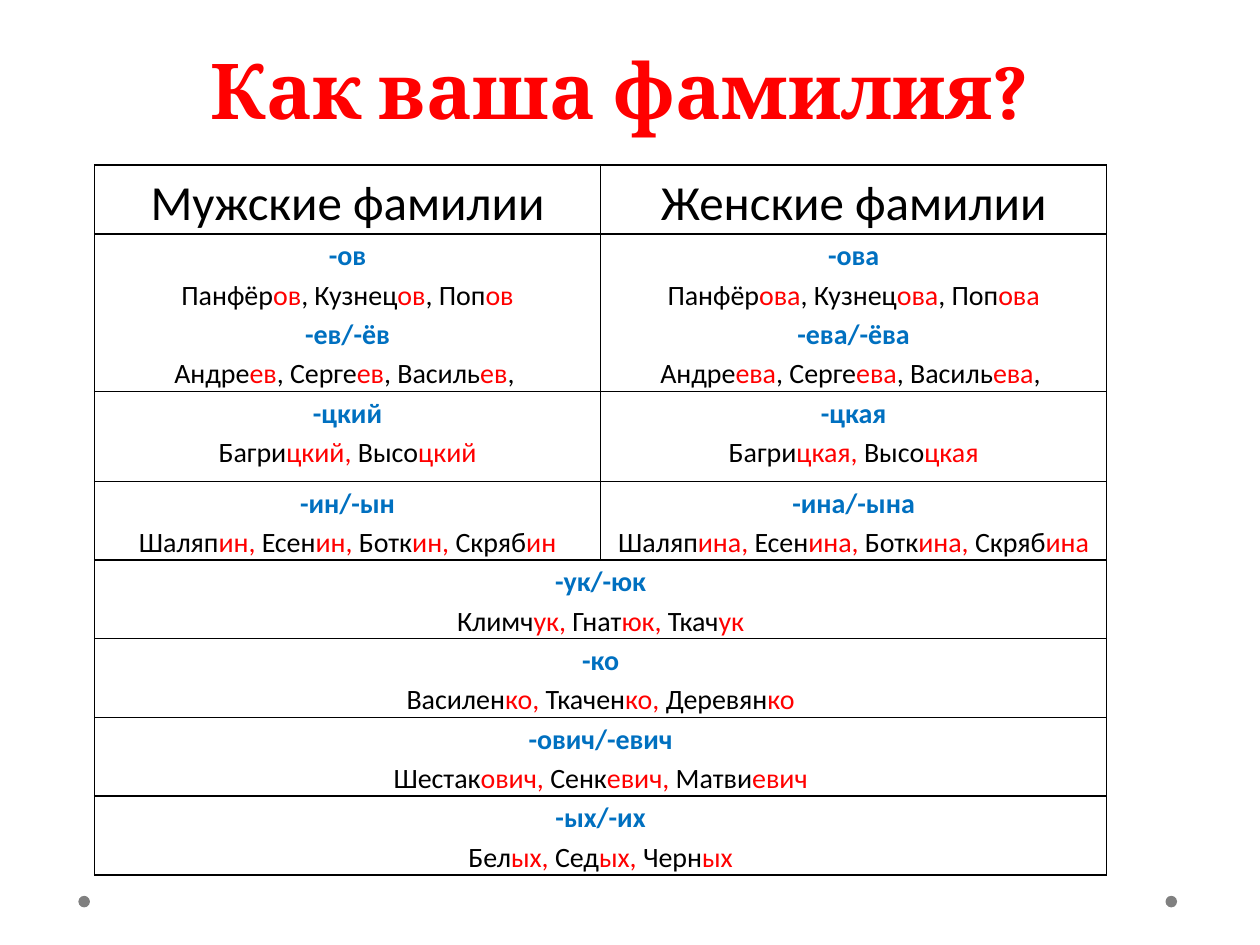
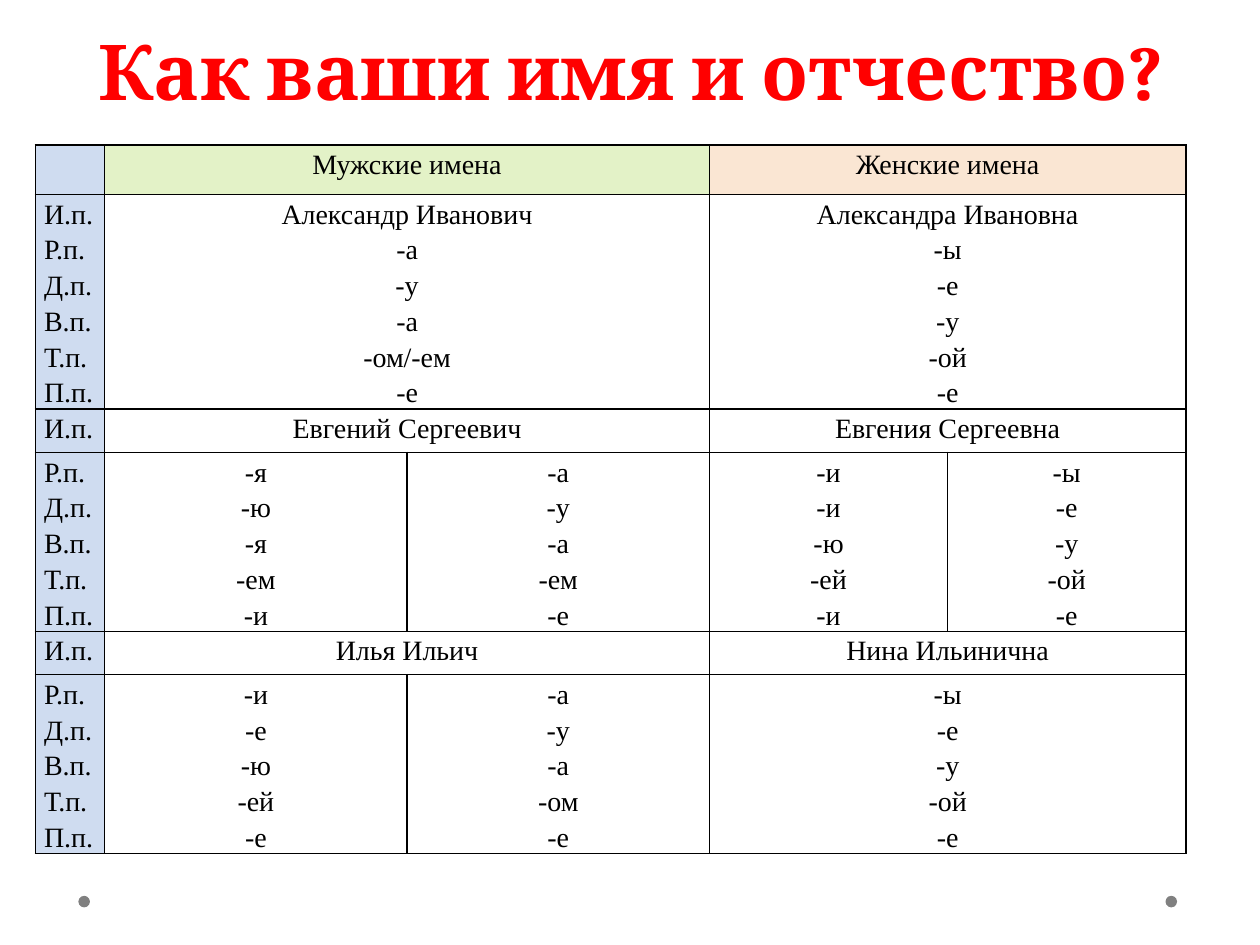
"""Builds two slides on Russian surnames and on first names with patronymics."""
from lxml import etree
from pptx import Presentation
from pptx.dml.color import RGBColor
from pptx.enum.shapes import MSO_SHAPE
from pptx.enum.text import MSO_ANCHOR, MSO_AUTO_SIZE, PP_ALIGN
from pptx.oxml.ns import qn
from pptx.util import Pt

ELLIPSE = MSO_SHAPE.OVAL
BOTTOM = MSO_ANCHOR.BOTTOM
NO_AUTOFIT = MSO_AUTO_SIZE.NONE
CENTER, JUSTIFY = PP_ALIGN.CENTER, PP_ALIGN.JUSTIFY
TITLE_ONLY = 5

COLORS = {
    "title": "FF0000", "ending": "FF0000", "suffix": "0070C0", "text": "000000",
    "border": "000000", "dot": "808080",
    "case": "CFDCF0", "male": "E3F2C7", "female": "FAE6D3",
}
CASES = ["И.п.", "Р.п.", "Д.п.", "В.п.", "Т.п.", "П.п."]
OBLIQUE_CASES = CASES[1:]

# In surname lines, "|" switches between the stem and the ending.
SURNAME_ROWS = [
    [["Мужские фамилии"], ["Женские фамилии"]],
    [["-ов", "Панфёр|ов|, Кузнец|ов|, Поп|ов",
      "-ев/-ёв", "Андре|ев|, Серге|ев|, Василь|ев|, "],
     ["-ова", "Панфёр|ова|, Кузнец|ова|, Поп|ова",
      "-ева/-ёва", "Андре|ева|, Серге|ева|, Василь|ева|, "]],
    [["-цкий", "Багри|цкий, |Высо|цкий"], ["-цкая", "Багри|цкая, |Высо|цкая"]],
    [["-ин/-ын", "Шаляп|ин, |Есен|ин, |Ботк|ин, |Скряб|ин"],
     ["-ина/-ына", "Шаляп|ина, |Есен|ина, |Ботк|ина, |Скряб|ина"]],
    [["-ук/-юк", "Климч|ук, |Гнат|юк, |Ткач|ук"], None],
    [["-ко", "Василен|ко, |Ткачен|ко, |Деревян|ко"], None],
    [["-ович/-евич", "Шестак|ович, |Сенк|евич, |Матви|евич"], None],
    [["-ых/-их", "Бел|ых, |Сед|ых, |Черн|ых"], None],
]
NAME_ROWS = [
    [[], ["Мужские имена"], None, ["Женские имена"], None],
    [CASES, ["Александр Иванович", "-а", "-у", "-а", "-ом/-ем", "-е"], None,
     ["Александра Ивановна", "-ы", "-е", "-у", "-ой", "-е"], None],
    [CASES[:1], ["Евгений Сергеевич"], None, ["Евгения Сергеевна"], None],
    [OBLIQUE_CASES, ["-я", "-ю", "-я", "-ем", "-и"], ["-а", "-у", "-а", "-ем", "-е"],
     ["-и", "-и", "-ю", "-ей", "-и"], ["-ы", "-е", "-у", "-ой", "-е"]],
    [CASES[:1], ["Илья Ильич"], None, ["Нина Ильинична"], None],
    [OBLIQUE_CASES, ["-и", "-е", "-ю", "-ей", "-е"], ["-а", "-у", "-а", "-ом", "-е"],
     ["-ы", "-е", "-у", "-ой", "-е"], None],
]
SLIDES = [
    {"title": " Как ваша фамилия?", "title_box": (25.2, 15.1, 648, 65.5),
     "rows": SURNAME_ROWS, "left": 54, "top": 94.3, "font": "Calibri",
     "header_size": 28, "widths": [289.2] * 2,
     "heights": [39.3, 89.8, 51.4] + [44.9] * 5,
     "mark_suffixes": True, "case_column": False, "header_fills": {}},
    {"title": "Как ваши имя и отчество?", "title_box": (36.7, 15.1, 648, 54.7),
     "rows": NAME_ROWS, "left": 20.2, "top": 82.8, "font": "Times New Roman",
     "header_size": 16, "widths": [39.6] + [172.8] * 2 + [136.1] * 2,
     "heights": [28.3, 122.5, 24.8, 102, 24.8, 102],
     "mark_suffixes": False, "case_column": True,
     "header_fills": {1: "male", 3: "female"}},
]


def add_run(paragraph, text, font_name, size, color, bold=False):
    run = paragraph.add_run()
    run.text = text
    run.font.name = font_name
    run.font.size = Pt(size)
    run.font.bold = bold
    run.font.color.rgb = RGBColor.from_string(COLORS[color])


def format_cell(cell, fill):
    cell.margin_left = cell.margin_right = Pt(5)
    cell.margin_top = cell.margin_bottom = Pt(0)
    if fill:
        cell.fill.solid()
        cell.fill.fore_color.rgb = RGBColor.from_string(COLORS[fill])
    else:
        cell.fill.background()
    properties = cell._tc.get_or_add_tcPr()
    for position, side in enumerate(("a:lnL", "a:lnR", "a:lnT", "a:lnB")):
        line = etree.Element(qn(side), w=str(Pt(1)))
        solid = etree.SubElement(line, qn("a:solidFill"))
        etree.SubElement(solid, qn("a:srgbClr"), val=COLORS["border"])
        properties.insert(position, line)


presentation = Presentation()
presentation.slide_width = Pt(720)
presentation.slide_height = Pt(540)

for content in SLIDES:
    slide = presentation.slides.add_slide(presentation.slide_layouts[TITLE_ONLY])

    for dot_left in (666, 44.8):
        dot = slide.shapes.add_shape(ELLIPSE, Pt(dot_left), Pt(511.9), Pt(6.6), Pt(6.6))
        dot.shadow.inherit = False
        dot.fill.solid()
        dot.fill.fore_color.rgb = RGBColor.from_string(COLORS["dot"])
        dot.line.fill.background()

    title = slide.shapes.title
    title.left, title.top, title.width, title.height = map(Pt, content["title_box"])
    title.text_frame.auto_size = NO_AUTOFIT
    title.text_frame.vertical_anchor = BOTTOM
    paragraph = title.text_frame.paragraphs[0]
    paragraph.alignment = CENTER
    paragraph.line_spacing = Pt(58)
    add_run(paragraph, content["title"], "Cambria", 44, "title", bold=True)

    rows, widths, heights = content["rows"], content["widths"], content["heights"]
    table = slide.shapes.add_table(
        len(rows), len(widths), Pt(content["left"]), Pt(content["top"]),
        Pt(sum(widths)), Pt(sum(heights))).table
    table.first_row = table.horz_banding = False
    for column, width in zip(table.columns, widths):
        column.width = Pt(width)
    for row, height in zip(table.rows, heights):
        row.height = Pt(height)

    for row_index, row_cells in enumerate(rows):
        for column_index, lines in enumerate(row_cells):
            cell = table.cell(row_index, column_index)
            is_case = content["case_column"] and column_index == 0
            is_header = row_index == 0
            fill = "case" if is_case else None
            if is_header and not is_case:
                fill = content["header_fills"].get(column_index)
            format_cell(cell, fill)
            if lines is None:
                table.cell(row_index, column_index - 1).merge(cell)
                continue
            size = content["header_size"] if is_header else 16
            for line_index, text in enumerate(lines):
                frame = cell.text_frame
                paragraph = frame.add_paragraph() if line_index else frame.paragraphs[0]
                paragraph.alignment = JUSTIFY if is_case else CENTER
                paragraph.line_spacing = 1.15
                if content["mark_suffixes"] and text.startswith("-"):
                    add_run(paragraph, text, content["font"], size, "suffix", bold=True)
                    continue
                for part_index, part in enumerate(text.split("|")):
                    color = "ending" if part_index % 2 else "text"
                    add_run(paragraph, part, content["font"], size, color)

presentation.save("out.pptx")
